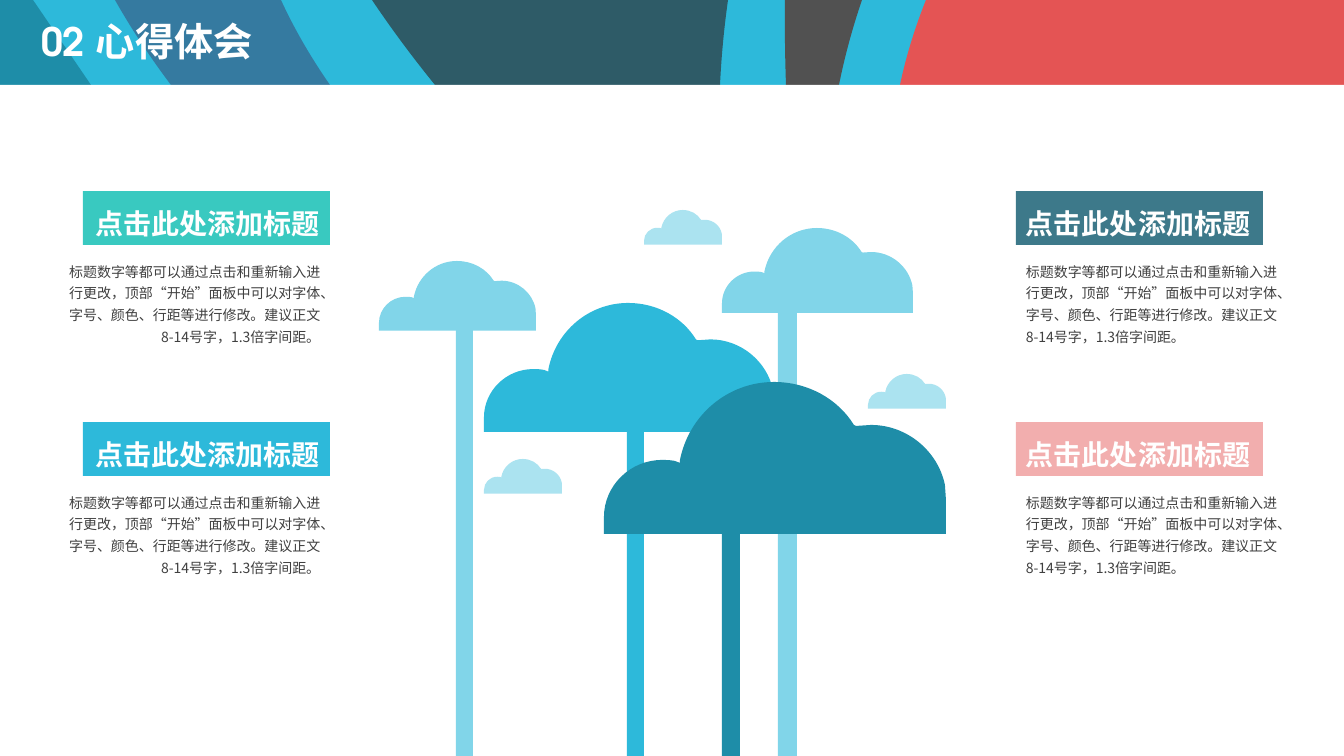
from lxml import etree
from pptx import Presentation
from pptx.dml.color import RGBColor
from pptx.enum.shapes import MSO_SHAPE
from pptx.enum.text import MSO_ANCHOR, MSO_AUTO_SIZE, PP_ALIGN
from pptx.oxml.ns import qn
from pptx.util import Emu, Pt

RECT = MSO_SHAPE.RECTANGLE
TOP, MIDDLE = MSO_ANCHOR.TOP, MSO_ANCHOR.MIDDLE
LEFT, RIGHT = PP_ALIGN.LEFT, PP_ALIGN.RIGHT
GROW, FIXED = MSO_AUTO_SIZE.SHAPE_TO_FIT_TEXT, MSO_AUTO_SIZE.NONE

SCALE = 914400 / 100.8
WIDTH, HEIGHT, HEADER = 1344, 756, 85
HEAD_FONT, BODY_FONT = "TeX Gyre Adventor", "Noto Sans CJK SC"
CURVE_TAGS = {2: "a:quadBezTo", 3: "a:cubicBezTo"}
COLORS = {
    "white": "FFFFFF", "text": "404040", "cyan": "2DB9DA", "teal": "1E8DA8",
    "blue": "357AA0", "pine": "2E5B67", "grey": "515151", "red": "E45454",
    "sky": "81D5E9", "mist": "ABE3F0", "mint": "39C9C0", "slate": "3D798A",
    "pink": "F2AEAE",
}
HEADING = "点击此处添加标题"
BODY = ("标题数字等都可以通过点击和重新输入进行更改，顶部“开始”面板中可以对字体、"
        "字号、颜色、行距等进行修改。建议正文8-14号字，1.3倍字间距。")

BANDS = [
    ("teal", (0, 0, 0), (33, 62, 91)),
    ("blue", (115, 141, 171), (281, 303, 330)),
    ("pine", (372, 402, 435), (728, 723, 720)),
    ("grey", (785, 785, 786), (862, 849, 839)),
    ("red", (926, 911, 900), (WIDTH, WIDTH, WIDTH)),
]
CLOUD_W, CLOUD_H = 342, 152
CLOUD_START = (170, 0)
CLOUD = [
    [(204, 0), (234, 17), (250, 43)],
    [(252, 44)],
    [(267, 43)],
    [(303, 43), (334, 69), (341, 103)],
    [(342, 118)],
    [(342, 152)],
    [(0, 152)],
    [(0, 135)],
    [(0, 104), (26, 78), (58, 78)],
    [(62, 78), (66, 78), (71, 79)],
    [(76, 81)],
    [(76, 78)],
    [(85, 33), (124, 0), (170, 0)],
]
BACK_TREES = [("sky", 722, 228, 191, 56, 19), ("sky", 379, 261, 157, 77, 17)]
SMALL_CLOUDS = [(484, 459), (644, 210), (868, 374)]
FRONT_TREES = [("cyan", 484, 303, 290, 143, 17), ("teal", 604, 382, 342, 118, 18)]
CARDS = [
    ("mint", 59, 191, RIGHT), ("cyan", 59, 422, RIGHT),
    ("slate", 1016, 191, LEFT), ("pink", 1016, 422, LEFT),
]


def px(value):
    """Turn px into EMU."""
    return Emu(round(value * SCALE))


def rgb(name):
    """Look up a named colour."""
    return RGBColor.from_string(COLORS[name])


def paint(sp, color):
    """Give a shape a flat fill, no line and no shadow."""
    sp.fill.solid()
    sp.fill.fore_color.rgb = rgb(color)
    sp.line.fill.background()
    sp.shadow.inherit = False
    return sp


def add_rect(slide, x, y, w, h, color):
    """Draw a flat rectangle."""
    return paint(slide.shapes.add_shape(RECT, px(x), px(y), px(w), px(h)), color)


def add_outline(slide, start, segments, color):
    """Draw a closed outline whose segments of two or three points are curves."""
    points = [(px(x), px(y)) for segment in segments for x, y in segment]
    builder = slide.shapes.build_freeform(px(start[0]), px(start[1]), scale=1.0)
    builder.add_line_segments(points, close=True)
    sp = builder.convert_to_shape()
    lines = iter(list(sp.element.iter(qn("a:lnTo"))))
    for segment in segments:
        first, *rest = [next(lines) for _ in segment]
        if rest:
            curve = etree.Element(qn(CURVE_TAGS[len(segment)]))
            first.addprevious(curve)
            for line in (first, *rest):
                curve.append(line[0])
                line.getparent().remove(line)
    return paint(sp, color)


def set_text(sp, text, size, font, color, align, spacing, anchor=TOP, bold=False,
             wrap=True, fit=GROW):
    """Write one formatted paragraph into a shape."""
    tf = sp.text_frame
    tf.word_wrap, tf.auto_size, tf.vertical_anchor = wrap, fit, anchor
    p = tf.paragraphs[0]
    p.alignment, p.line_spacing = align, spacing
    r = p.add_run()
    r.text = text
    r.font.size, r.font.bold, r.font.name = Pt(size), bold, font
    r.font.color.rgb = rgb(color)
    etree.SubElement(r.font._element, qn("a:ea"), typeface=BODY_FONT)


def add_header(slide, x, y, w, h):
    """Draw the curved colour bands and the title over them."""
    for color, left, right in BANDS:
        bend_left, bend_right = [
            (x + 2 * mid - (top + bottom) / 2, y + h / 2)
            for top, mid, bottom in (left, right)
        ]
        add_outline(slide, (x + left[0], y), [
            [bend_left, (x + left[2], y + h)],
            [(x + right[2], y + h)],
            [bend_right, (x + right[0], y)],
        ], color)
    add_rect(slide, x, y + h, w, HEIGHT - y - h, "white")
    title = slide.shapes.title
    title.left, title.top = px(x + 31), px(y + 11)
    title.width, title.height = px(855), px(65)
    set_text(title, "02 心得体会", 28, HEAD_FONT, "white", LEFT, 0.9,
             MIDDLE, bold=True, fit=FIXED)
    slide.shapes.element.append(title.element)


def add_cloud(slide, x, y, w, color):
    """Draw a cloud of the given width."""
    k = w / CLOUD_W
    start = (x + CLOUD_START[0] * k, y + CLOUD_START[1] * k)
    segments = [[(x + cx * k, y + cy * k) for cx, cy in part] for part in CLOUD]
    add_outline(slide, start, segments, color)


def add_tree(slide, color, x, y, w, trunk_dx, trunk_w):
    """Draw a cloud on a trunk that reaches the slide's foot."""
    trunk_y = y + round(w * CLOUD_H / CLOUD_W) - 1
    add_rect(slide, x + trunk_dx, trunk_y, trunk_w, HEIGHT - trunk_y, color)
    add_cloud(slide, x, y, w, color)


def add_card(slide, color, x, y, align, w=271, head_w=247):
    """Draw a heading bar with body text below it."""
    body = slide.shapes.add_textbox(px(x), px(y + 62), px(w), px(99))
    set_text(body, BODY, 10, BODY_FONT, "text", align, 1.3)
    head_x = x + w - head_w if align == RIGHT else x
    head = add_rect(slide, head_x, y, head_w, 54, color)
    set_text(head, HEADING, 20, HEAD_FONT, "white", align, 1.3, bold=True, wrap=False)


def main():
    """Build and save the slide."""
    prs = Presentation()
    prs.slide_width, prs.slide_height = px(WIDTH), px(HEIGHT)
    slide = prs.slides.add_slide(prs.slide_layouts[5])
    slide.background.fill.solid()
    slide.background.fill.fore_color.rgb = rgb("cyan")
    add_header(slide, 0, 0, WIDTH, HEADER)
    for tree in BACK_TREES:
        add_tree(slide, *tree)
    for x, y in SMALL_CLOUDS:
        add_cloud(slide, x, y, 78, "mist")
    for tree in FRONT_TREES:
        add_tree(slide, *tree)
    for card in CARDS:
        add_card(slide, *card)
    prs.save("out.pptx")


if __name__ == "__main__":
    main()
